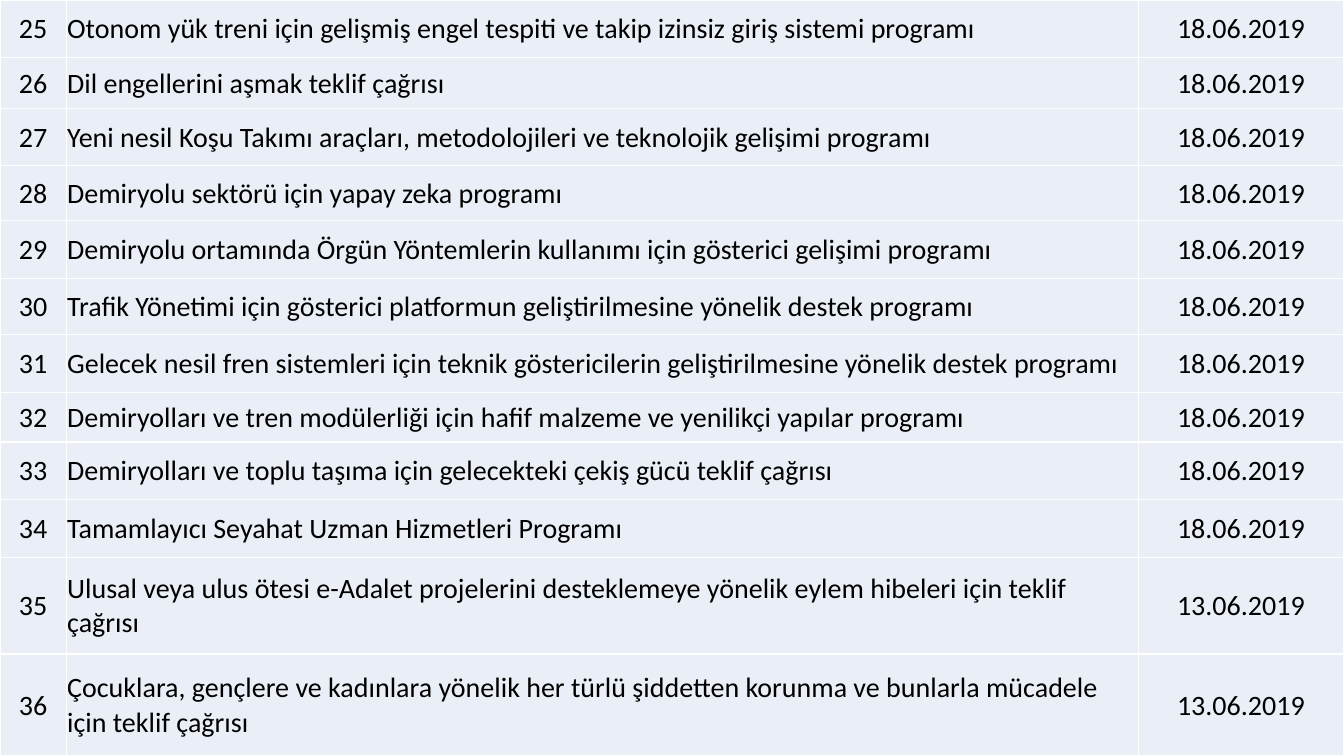
from lxml.etree import SubElement
from pptx import Presentation
from pptx.dml.color import RGBColor
from pptx.enum.text import MSO_ANCHOR as Anchor, PP_ALIGN as Align
from pptx.oxml.ns import qn
from pptx.util import Pt

PX = 9525
WIDE, HIGH = 1280, 720
PALE = RGBColor(0xEA, 0xEF, 0xF7)
BLACK = RGBColor(0, 0, 0)
WHITE = RGBColor(0xFF, 0xFF, 0xFF)
FONT = "Calibri"

COLS = (63, 1021, 196)
ALIGNS = (Align.CENTER, Align.LEFT, Align.CENTER)
FIRST = 25
JUNE_18, JUNE_13 = "18.06.2019", "13.06.2019"

# Row height, name of the call, closing date
CALLS = (
    (55, "Otonom yük treni için gelişmiş engel tespiti ve takip izinsiz giriş sistemi programı", JUNE_18),
    (48, "Dil engellerini aşmak teklif çağrısı", JUNE_18),
    (55, "Yeni nesil Koşu Takımı araçları, metodolojileri ve teknolojik gelişimi programı", JUNE_18),
    (52, "Demiryolu sektörü için yapay zeka programı", JUNE_18),
    (55, "Demiryolu ortamında Örgün Yöntemlerin kullanımı için gösterici gelişimi programı", JUNE_18),
    (54, "Trafik Yönetimi için gösterici platformun geliştirilmesine yönelik destek programı", JUNE_18),
    (55, "Gelecek nesil fren sistemleri için teknik göstericilerin geliştirilmesine yönelik destek programı", JUNE_18),
    (47, "Demiryolları ve tren modülerliği için hafif malzeme ve yenilikçi yapılar programı", JUNE_18),
    (55, "Demiryolları ve toplu taşıma için gelecekteki çekiş gücü teklif çağrısı", JUNE_18),
    (55, "Tamamlayıcı Seyahat Uzman Hizmetleri Programı", JUNE_18),
    (92, "Ulusal veya ulus ötesi e-Adalet projelerini desteklemeye yönelik eylem hibeleri için teklif çağrısı", JUNE_13),
    (97, "Çocuklara, gençlere ve kadınlara yönelik her türlü şiddetten korunma ve bunlarla mücadele "
         "için teklif çağrısı", JUNE_13),
)


def add_edges(cell):
    """Draw a thin white line on all four sides of a cell."""
    props = cell._tc.get_or_add_tcPr()
    for side in ("a:lnL", "a:lnR", "a:lnT", "a:lnB"):
        line = SubElement(props, qn(side), w=str(Pt(1)))
        fill = SubElement(line, qn("a:solidFill"))
        SubElement(fill, qn("a:srgbClr"), val=str(WHITE))


def fill_cell(cell, text, align):
    add_edges(cell)
    cell.fill.solid()
    cell.fill.fore_color.rgb = PALE
    cell.vertical_anchor = Anchor.MIDDLE
    cell.margin_left = cell.margin_right = cell.margin_top = PX
    cell.margin_bottom = 0
    para = cell.text_frame.paragraphs[0]
    para.alignment = align
    run = para.add_run()
    run.text = text
    run.font.name = FONT
    run.font.size = Pt(20)
    run.font.color.rgb = BLACK


def add_calls(slide):
    frame = slide.shapes.add_table(len(CALLS), len(COLS), 0, 0, WIDE * PX, HIGH * PX)
    table = frame.table
    table.first_row = table.horz_banding = False
    for col, width in zip(table.columns, COLS):
        col.width = width * PX
    for num, (row, (height, name, date)) in enumerate(zip(table.rows, CALLS), FIRST):
        row.height = height * PX
        for cell, text, align in zip(row.cells, (str(num), name, date), ALIGNS):
            fill_cell(cell, text, align)


def main():
    deck = Presentation()
    deck.slide_width, deck.slide_height = WIDE * PX, HIGH * PX
    slide = deck.slides.add_slide(deck.slide_layouts[6])
    add_calls(slide)
    deck.save("out.pptx")


if __name__ == "__main__":
    main()
